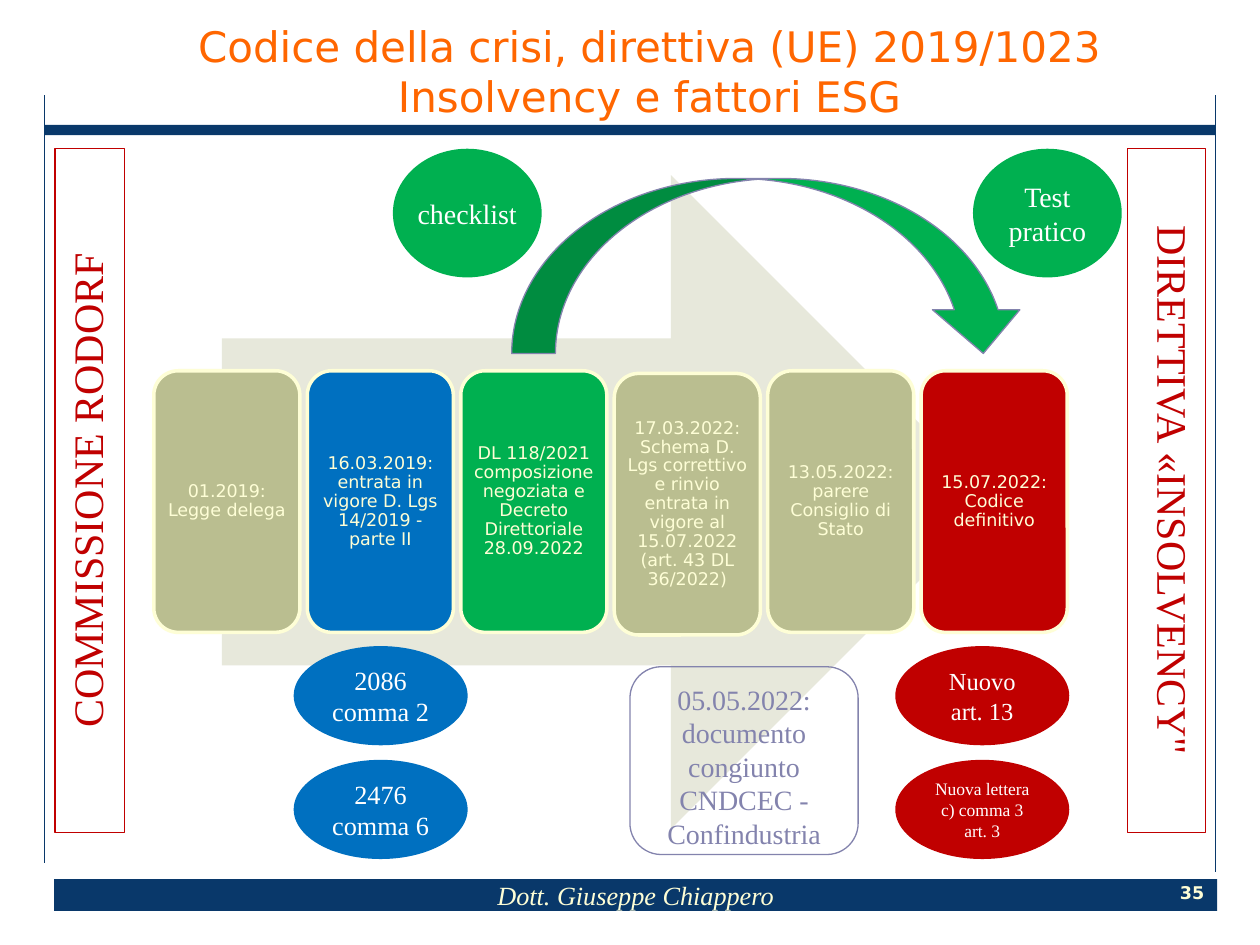
from typing import NamedTuple, Optional

from lxml import etree
from pptx import Presentation
from pptx import util as u
from pptx.dml.color import RGBColor
from pptx.enum import shapes, text
from pptx.oxml import ns

Pt = u.Pt
KIND = shapes.MSO_SHAPE
ANCHOR = text.MSO_ANCHOR

NAVY = RGBColor(0x09, 0x38, 0x6A)
CREAM = RGBColor(0xFE, 0xFE, 0xD6)
ORANGE = RGBColor(0xFF, 0x66, 0x00)
PALE = RGBColor(0xE7, 0xE8, 0xDB)
OLIVE = RGBColor(0xBA, 0xBE, 0x90)
BLUE = RGBColor(0x00, 0x70, 0xC0)
GREEN = RGBColor(0x00, 0xB0, 0x50)
RED = RGBColor(0xC0, 0x00, 0x00)
LILAC = RGBColor(0x83, 0x83, 0xAD)
WHITE = RGBColor(0xFF, 0xFF, 0xFF)

SANS = "DejaVu Sans"
SERIF = "Times New Roman"


class Box(NamedTuple):
    x: float
    y: float
    w: float
    h: float

    def points(self):
        return [Pt(v) for v in self]


class Card(NamedTuple):
    label: str
    fill: RGBColor
    drop: float = 0


class Bubble(NamedTuple):
    label: str
    box: Box
    fill: RGBColor
    size: float
    wrap: bool = True


class Banner(NamedTuple):
    label: str
    box: Box
    rotation: float


CARDS = [
    Card("01.2019: Legge delega", OLIVE),
    Card("16.03.2019: entrata in vigore D. Lgs 14/2019 - parte II", BLUE),
    Card("DL 118/2021 composizione negoziata e Decreto Direttoriale 28.09.2022", GREEN),
    Card("17.03.2022: Schema D. Lgs correttivo e rinvio entrata in vigore al "
         "15.07.2022 (art. 43 DL 36/2022)", OLIVE, drop=1.5),
    Card("13.05.2022: parere Consiglio di Stato", OLIVE),
    Card("15.07.2022: Codice definitivo", RED),
]
CARD_X, CARD_Y, CARD_W, CARD_H, CARD_STEP = 87.9, 211.9, 83.5, 149.5, 87.7

TOP_Y, ROW_1, ROW_2 = 85, 369.2, 434.2
LEFT_X, RIGHT_X = 167.8, 511.6
BUBBLES = [
    Bubble("checklist", Box(224.5, TOP_Y, 85, 73.5), GREEN, 16, wrap=False),
    Bubble("Test pratico", Box(556, TOP_Y, 85, 73.5), GREEN, 16),
    Bubble("2086 comma 2", Box(LEFT_X, ROW_1, 99.4, 56.7), BLUE, 15),
    Bubble("2476 comma 6", Box(LEFT_X, ROW_2, 99.4, 56.7), BLUE, 15),
    Bubble("Nuovo art. 13", Box(RIGHT_X, ROW_1, 99.4, 56.7), RED, 14),
    Bubble("Nuova lettera c) comma 3 art. 3", Box(RIGHT_X, ROW_2, 99.4, 56.7), RED, 10),
]

BANNERS = [
    Banner("DIRETTIVA «INSOLVENCY\"", Box(471, 257.8, 391, 44.8), 90),
    Banner("COMMISSIONE RODORF", Box(-144.2, 260.3, 391, 39.8), 270),
]


def write(sp, content: str, *, size: float, color: RGBColor, font: str = SERIF,
          bold: bool = False, italic: bool = False, wrap: bool = True,
          anchor=ANCHOR.MIDDLE, inset: Optional[float] = None,
          spacing: Optional[float] = None) -> None:
    """Put centred text in a shape; a newline becomes a line break."""
    tf = sp.text_frame
    tf.word_wrap = wrap
    tf.vertical_anchor = anchor
    if inset is not None:
        tf.margin_left = tf.margin_right = Pt(inset)
        tf.margin_top = tf.margin_bottom = Pt(inset)
    p = tf.paragraphs[0]
    p.alignment = text.PP_ALIGN.CENTER
    if spacing:
        p.line_spacing = spacing
    for i, line in enumerate(content.split("\n")):
        if i:
            p.add_line_break()
        r = p.add_run()
        r.text = line
        r.font.name, r.font.size = font, Pt(size)
        r.font.bold, r.font.italic = bold, italic
        r.font.color.rgb = color


def add_shape(s, kind, box: Box, fill: Optional[RGBColor] = None,
              line: Optional[RGBColor] = None, width: float = 0.75):
    sp = s.shapes.add_shape(kind, *box.points())
    sp.shadow.inherit = False
    if fill is None:
        sp.fill.background()
    else:
        sp.fill.solid()
        sp.fill.fore_color.rgb = fill
    if line is None:
        sp.line.fill.background()
    else:
        sp.line.color.rgb = line
        sp.line.width = Pt(width)
    return sp


def add_rule(s, x: float, top: float, bottom: float) -> None:
    c = s.shapes.add_connector(shapes.MSO_CONNECTOR.STRAIGHT,
                               Pt(x), Pt(top), Pt(x), Pt(bottom))
    c.line.color.rgb = NAVY
    c.line.width = Pt(1)
    etree.SubElement(c._element.spPr, ns.qn("a:effectLst"))


def add_card(s, card: Card, index: int) -> None:
    box = Box(CARD_X + index * CARD_STEP, CARD_Y + card.drop, CARD_W, CARD_H)
    sp = add_shape(s, KIND.ROUNDED_RECTANGLE, box, card.fill, CREAM, 2)
    write(sp, card.label, size=10, color=CREAM, font=SANS, inset=3, spacing=0.9)


def add_bubble(s, bubble: Bubble) -> None:
    sp = add_shape(s, KIND.OVAL, bubble.box, bubble.fill)
    write(sp, bubble.label, size=bubble.size, color=WHITE, wrap=bubble.wrap)


def add_banner(s, banner: Banner) -> None:
    sp = add_shape(s, KIND.RECTANGLE, banner.box, line=RED)
    sp.rotation = banner.rotation
    write(sp, banner.label, size=24, color=RED, wrap=False, anchor=ANCHOR.TOP)


def main() -> None:
    prs = Presentation()
    prs.slide_width, prs.slide_height = Pt(720), Pt(540)
    s = prs.slides.add_slide(prs.slide_layouts[6])

    # Frame and footer
    add_shape(s, KIND.RECTANGLE, Box(25.2, 71.4, 669, 5.8), NAVY)
    footer = add_shape(s, KIND.RECTANGLE, Box(31, 502.4, 664.6, 18.2), NAVY)
    write(footer, "Dott. Giuseppe Chiappero", size=15, color=CREAM, italic=True)
    add_rule(s, 25.4, 54.5, 493)
    add_rule(s, 694.6, 54.5, 498.5)
    number = s.shapes.add_textbox(*Box(671.8, 502.6, 18.7, 14.4).points())
    write(number, "35", size=10, color=CREAM, font=SANS, bold=True, wrap=False,
          inset=0)

    # Title
    title = s.shapes.add_textbox(*Box(36.7, 9.1, 669, 62.6).points())
    write(title, "Codice della crisi, direttiva (UE) 2019/1023\n"
                 "Insolvency e fattori ESG", size=24, color=ORANGE, font=SANS)

    # Timeline
    add_shape(s, KIND.RIGHT_ARROW, Box(126.8, 100, 443.5, 373.7), PALE)
    for i, card in enumerate(CARDS):
        add_card(s, card, i)

    # Side banners and annotations
    for banner in BANNERS:
        add_banner(s, banner)
    add_shape(s, KIND.CURVED_DOWN_ARROW, Box(292.4, 102, 294.5, 100), GREEN, LILAC)
    for bubble in BUBBLES:
        add_bubble(s, bubble)
    note = add_shape(s, KIND.ROUNDED_RECTANGLE, Box(360, 381, 130.4, 107.3), line=LILAC)
    write(note, "05.05.2022: documento congiunto CNDCEC - Confindustria",
          size=16, color=LILAC, anchor=ANCHOR.TOP)

    prs.save("out.pptx")


if __name__ == "__main__":
    main()
